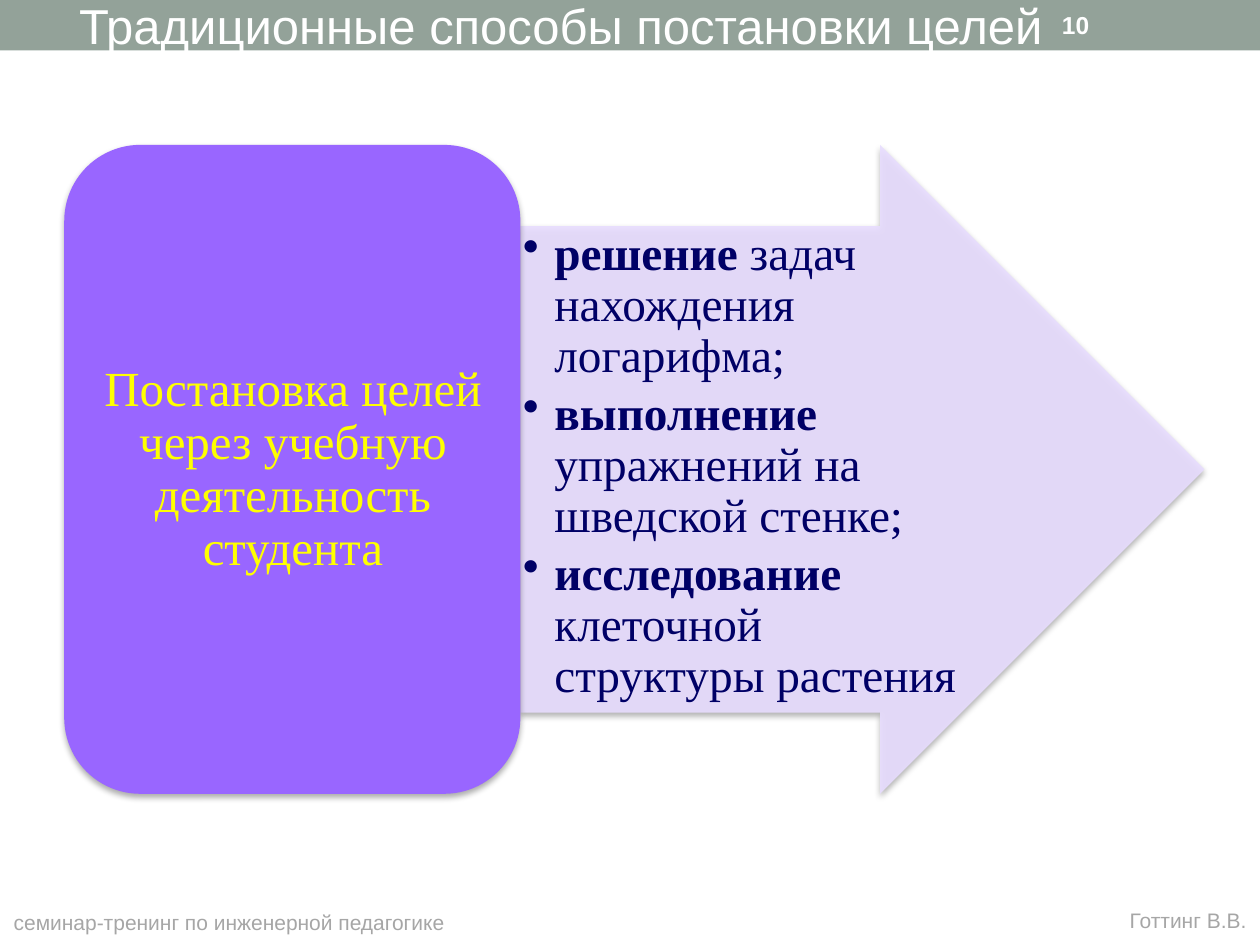
from lxml import etree
from pptx import Presentation, util as u
from pptx.dml.color import RGBColor
from pptx.enum import shapes, text
from pptx.oxml import parse_xml
from pptx.oxml.ns import nsdecls, qn

ALIGN = text.PP_ALIGN
ANCHOR = text.MSO_ANCHOR
SERIF = "Times New Roman"


def colour(value):
    return RGBColor.from_string(value)


def write(paragraph, words, size=12, font="Arial", color="A6A6A6", bold=False):
    run = paragraph.add_run()
    run.text = words
    run.font.size = u.Pt(size)
    run.font.name = font
    run.font.bold = bold
    run.font.color.rgb = colour(color)


class SlideBuilder:
    def __init__(self, slide):
        self.slide = slide

    def shape(self, kind, box, fill, alpha=None, adjustments=(), shadow=False):
        shape = self.slide.shapes.add_shape(kind, *map(u.Inches, box))
        shape.shadow.inherit = False
        shape.fill.solid()
        shape.fill.fore_color.rgb = colour(fill)
        shape.line.fill.background()
        for index, value in enumerate(adjustments):
            shape.adjustments[index] = value
        properties = shape._element.spPr
        if alpha:
            node = properties.find(qn("a:solidFill"))[0]
            etree.SubElement(node, qn("a:alpha")).set("val", str(alpha * 1000))
        if shadow:
            properties.find(qn("a:effectLst")).append(parse_xml(
                f'<a:outerShdw {nsdecls("a")} blurRad="{u.Pt(3.5)}" dist="{u.Pt(2.2)}"'
                ' dir="5400000" rotWithShape="0"><a:srgbClr val="000000">'
                '<a:alpha val="32000"/></a:srgbClr></a:outerShdw>'))
        return shape

    def frame(self, box, anchor=ANCHOR.MIDDLE, margins=(0.1, 0.05)):
        frame = self.slide.shapes.add_textbox(*map(u.Inches, box)).text_frame
        frame.word_wrap = True
        frame.vertical_anchor = anchor
        frame.margin_left = frame.margin_right = u.Inches(margins[0])
        frame.margin_top = frame.margin_bottom = u.Inches(margins[1])
        return frame

    def label(self, words, box, align=ALIGN.CENTER, spacing=1.0,
              margins=(0.1, 0.05), **style):
        paragraph = self.frame(box, margins=margins).paragraphs[0]
        paragraph.alignment = align
        paragraph.line_spacing = spacing
        write(paragraph, words, **style)

    def bullets(self, items, box, **style):
        frame = self.frame(box, ANCHOR.TOP, (0.02, 0.02))
        for index, (lead, rest) in enumerate(items):
            paragraph = frame.add_paragraph() if index else frame.paragraphs[0]
            paragraph.line_spacing = 0.9
            paragraph.space_after = u.Pt(4)
            properties = paragraph._p.get_or_add_pPr()
            properties.set("marL", str(u.Inches(0.25)))
            properties.set("indent", str(-u.Inches(0.25)))
            etree.SubElement(properties, qn("a:buChar")).set("char", "•")
            write(paragraph, lead, bold=True, **style)
            write(paragraph, rest, **style)


def main():
    presentation = Presentation()
    presentation.slide_width = u.Inches(10)
    presentation.slide_height = u.Inches(7.5)
    builder = SlideBuilder(presentation.slides.add_slide(presentation.slide_layouts[6]))
    preset = shapes.MSO_SHAPE

    # Header band with title and slide number
    builder.shape(preset.RECTANGLE, (0, 0, 10, 0.4), "93A299")
    builder.label("Традиционные способы постановки целей", (-0.04, -0.27, 8.98, 0.94),
                  size=28, color="FFFFFF")
    builder.label("10", (8.33, 0.02, 1.17, 0.36), align=ALIGN.LEFT,
                  size=14, color="FFFFFF", bold=True)

    # Arrow with examples
    builder.shape(preset.RIGHT_ARROW, (4.13, 1.15, 5.43, 5.15), "E8DDFF",
                  alpha=90, adjustments=(0.75, 0.5), shadow=True)
    builder.bullets([
        ("решение", " задач нахождения логарифма;"),
        ("выполнение", " упражнений на шведской стенке;"),
        ("исследование", " клеточной структуры растения"),
    ], (4.13, 1.8, 3.5, 3.86), size=27, font=SERIF, color="000066")

    # Topic block
    builder.shape(preset.ROUNDED_RECTANGLE, (0.51, 1.15, 3.62, 5.15), "9966FF", shadow=True)
    builder.label("Постановка целей через учебную деятельность студента",
                  (0.69, 1.33, 3.27, 4.8), spacing=0.9, margins=(0.12, 0.06),
                  size=28, font=SERIF, color="FFFF00")

    # Footer
    builder.label("семинар-тренинг по инженерной педагогике", (-0.43, 7.14, 4.5, 0.36))
    builder.label("Готтинг В.В.", (8.86, 7.14, 1.14, 0.32))

    presentation.save("out.pptx")


if __name__ == "__main__":
    main()
